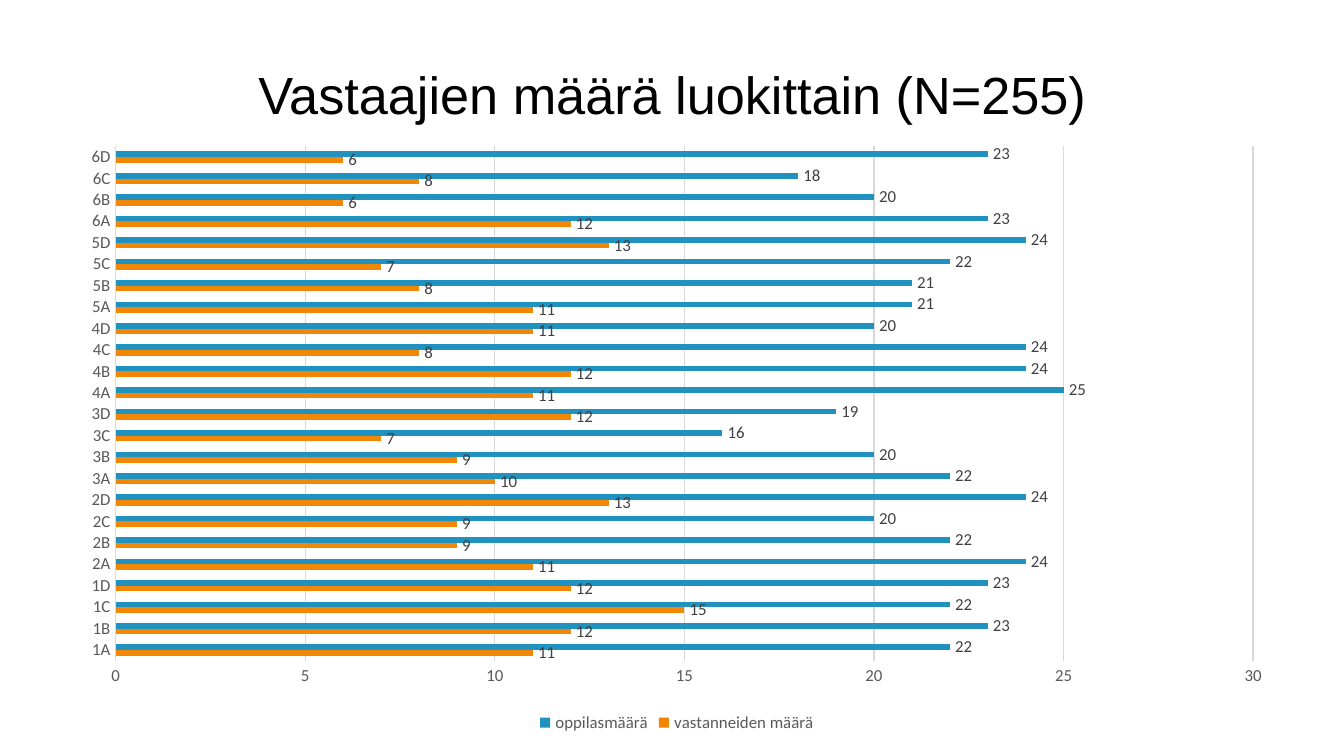
import pptx
import pptx.util
import pptx.chart.data
import pptx.dml.color
import pptx.enum.chart
import pptx.enum.text

Inches = pptx.util.Inches
RGBColor = pptx.dml.color.RGBColor

BLACK = RGBColor(0x00, 0x00, 0x00)
LABEL_GREY = RGBColor(0x40, 0x40, 0x40)
AXIS_GREY = RGBColor(0x59, 0x59, 0x59)
GRID_GREY = RGBColor(0xD9, 0xD9, 0xD9)
ORANGE = RGBColor(0xF2, 0x87, 0x05)
BLUE = RGBColor(0x21, 0x92, 0xBF)

CLASSES = [f"{grade}{letter}" for grade in range(1, 7) for letter in "ABCD"]
SERIES = [
    ("vastanneiden määrä", ORANGE,
     [11, 12, 15, 12, 11, 9, 9, 13, 10, 9, 7, 12,
      11, 12, 8, 11, 11, 8, 7, 13, 12, 6, 8, 6]),
    ("oppilasmäärä", BLUE,
     [22, 23, 22, 23, 24, 22, 20, 24, 22, 20, 16, 19,
      25, 24, 24, 20, 21, 21, 22, 24, 23, 20, 18, 23]),
]


def set_font(font, name="Calibri", size=9, color=AXIS_GREY):
    font.name = name
    font.size = pptx.util.Pt(size)
    font.bold = False
    font.color.rgb = color


def add_text(tf, text, align=pptx.enum.text.PP_ALIGN.LEFT, **style):
    p = tf.paragraphs[0]
    p.alignment = align
    r = p.add_run()
    r.text = text
    set_font(r.font, **style)


class SlideBuilder:
    title_style = dict(name="Arial", size=28, color=BLACK)

    def __init__(self, s):
        self.s = s

    def title(self, text, x, y, w, h):
        sp = self.s.shapes.add_textbox(Inches(x), Inches(y), Inches(w), Inches(h))
        tf = sp.text_frame
        tf.word_wrap = True
        tf.vertical_anchor = pptx.enum.text.MSO_ANCHOR.MIDDLE
        add_text(tf, text, align=pptx.enum.text.PP_ALIGN.CENTER, **self.title_style)

    def bar_chart(self, categories, series, x, y, w, h):
        data = pptx.chart.data.CategoryChartData(number_format="0")
        data.categories = categories
        for name, _, values in series:
            data.add_series(name, values)
        chart = self.s.shapes.add_chart(
            pptx.enum.chart.XL_CHART_TYPE.BAR_CLUSTERED,
            Inches(x), Inches(y), Inches(w), Inches(h), data).chart
        set_font(chart.font, size=10, color=BLACK)
        chart.has_title = False

        # Legend
        chart.has_legend = True
        chart.legend.position = pptx.enum.chart.XL_LEGEND_POSITION.BOTTOM
        chart.legend.include_in_layout = False
        set_font(chart.legend.font)

        # Axes and gridlines
        for axis in (chart.category_axis, chart.value_axis):
            axis.major_tick_mark = pptx.enum.chart.XL_TICK_MARK.NONE
            axis.minor_tick_mark = pptx.enum.chart.XL_TICK_MARK.NONE
            set_font(axis.tick_labels.font)
        chart.category_axis.has_major_gridlines = False
        chart.value_axis.has_major_gridlines = True
        chart.value_axis.format.line.fill.background()
        for line in (chart.category_axis.format.line,
                     chart.value_axis.major_gridlines.format.line):
            line.color.rgb = GRID_GREY
            line.width = pptx.util.Pt(0.75)

        # Bars and their values
        plot = chart.plots[0]
        plot.gap_width = 182
        plot.overlap = 0
        plot.vary_by_categories = False
        for bars, (_, color, _) in zip(plot.series, series):
            bars.format.fill.solid()
            bars.format.fill.fore_color.rgb = color
            labels = bars.data_labels
            labels.show_value = True
            labels.position = pptx.enum.chart.XL_LABEL_POSITION.OUTSIDE_END
            set_font(labels.font, color=LABEL_GREY)


def main():
    # Widescreen slide, 16:9
    prs = pptx.Presentation()
    prs.slide_width = Inches(10)
    prs.slide_height = Inches(10 * 9 / 16)
    builder = SlideBuilder(prs.slides.add_slide(prs.slide_layouts[6]))

    # Chart, then the heading above it
    builder.bar_chart(CLASSES, SERIES, 0.5, 1, 9.07, 4.49)
    builder.title("Vastaajien määrä luokittain (N=255)", 0.5, 0.23, 9, 0.94)

    prs.save("out.pptx")


if __name__ == "__main__":
    main()
